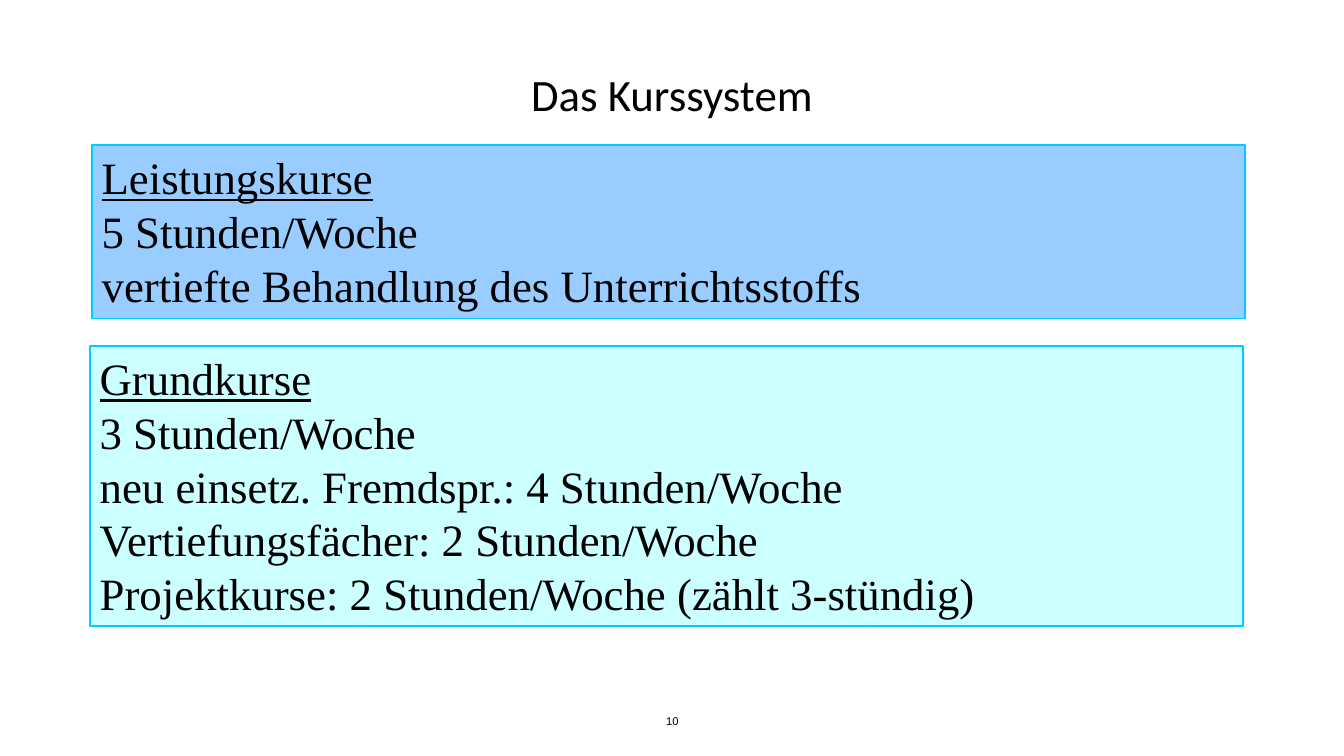
from pptx import Presentation
from pptx.dml.color import RGBColor
from pptx.enum.shapes import MSO_SHAPE
from pptx.enum.text import MSO_ANCHOR, MSO_AUTO_SIZE, PP_ALIGN
from pptx.util import Inches, Pt

BLACK = RGBColor(0x00, 0x00, 0x00)
WHITE = RGBColor(0xFF, 0xFF, 0xFF)
BLUE = RGBColor(0x99, 0xCC, 0xFF)
AQUA = RGBColor(0xCC, 0xFF, 0xFF)
CYAN = RGBColor(0x00, 0xCC, 0xFF)


class Page:
    head_font = "Calibri"
    body_font = "Times New Roman"
    foot_font = "Arial"
    size = 32
    foot_size = 8

    def __init__(self, deck):
        self.slide = deck.slides.add_slide(deck.slide_layouts[6])

    def rect(self, area, fill):
        shape = self.slide.shapes.add_shape(
            MSO_SHAPE.RECTANGLE, *map(Inches, area))
        shape.shadow.inherit = False
        shape.fill.solid()
        shape.fill.fore_color.rgb = fill
        shape.text_frame.word_wrap = True
        shape.text_frame.vertical_anchor = MSO_ANCHOR.TOP
        return shape

    def add_text(self, para, text, font, size, align, under=False):
        para.alignment = align
        run = para.add_run()
        run.text = text
        run.font.name = font
        run.font.size = Pt(size)
        run.font.color.rgb = BLACK
        run.font.underline = under

    def title(self, area, text):
        shape = self.rect(area, WHITE)
        shape.line.fill.background()
        para = shape.text_frame.paragraphs[0]
        para.line_spacing = 0.9
        self.add_text(para, text, self.head_font, self.size, PP_ALIGN.CENTER)

    def panel(self, area, fill, lines):
        shape = self.rect(area, fill)
        shape.line.color.rgb = CYAN
        shape.line.width = Pt(1.25)
        frame = shape.text_frame
        frame.auto_size = MSO_AUTO_SIZE.SHAPE_TO_FIT_TEXT
        for row, text in enumerate(lines):
            para = frame.add_paragraph() if row else frame.paragraphs[0]
            self.add_text(para, text, self.body_font, self.size,
                          PP_ALIGN.LEFT, under=row == 0)

    def number(self, area, text):
        frame = self.slide.shapes.add_textbox(*map(Inches, area)).text_frame
        frame.word_wrap = True
        frame.vertical_anchor = MSO_ANCHOR.MIDDLE
        self.add_text(frame.paragraphs[0], text, self.foot_font,
                      self.foot_size, PP_ALIGN.CENTER)


def main():
    deck = Presentation()
    deck.slide_width = Inches(13.33)
    deck.slide_height = Inches(7.5)
    page = Page(deck)
    page.number((4.42, 6.95, 4.5, 0.4), "10")
    page.title((1, 0.67, 11.33, 0.69), "Das Kurssystem")
    page.panel((0.91, 1.44, 11.44, 1.72), BLUE, [
        "Leistungskurse",
        "5 Stunden/Woche",
        "vertiefte Behandlung des Unterrichtsstoffs",
    ])
    page.panel((0.89, 3.43, 11.44, 2.78), AQUA, [
        "Grundkurse",
        "3 Stunden/Woche",
        "neu einsetz. Fremdspr.: 4 Stunden/Woche",
        "Vertiefungsfächer: 2 Stunden/Woche",
        "Projektkurse: 2 Stunden/Woche (zählt 3-stündig)",
    ])
    deck.save("out.pptx")


if __name__ == "__main__":
    main()
